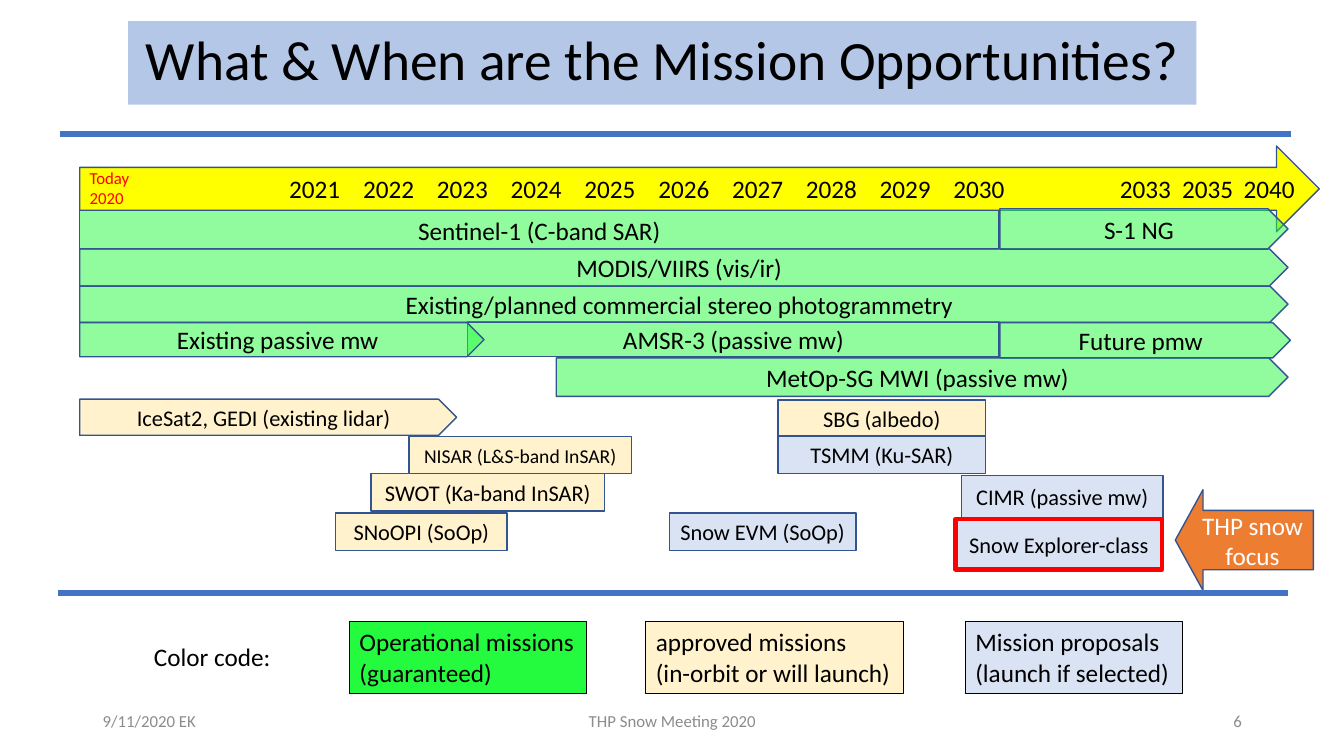
from lxml import etree
from pptx import Presentation
from pptx.dml.color import RGBColor
from pptx.enum.shapes import MSO_CONNECTOR, MSO_SHAPE
from pptx.enum.text import MSO_ANCHOR, PP_ALIGN
from pptx.oxml.ns import qn
from pptx.util import Cm, Pt

RECTANGLE, PENTAGON = MSO_SHAPE.RECTANGLE, MSO_SHAPE.PENTAGON
RIGHT_ARROW, LEFT_ARROW = MSO_SHAPE.RIGHT_ARROW, MSO_SHAPE.LEFT_ARROW
LEFT, CENTER, RIGHT = PP_ALIGN.LEFT, PP_ALIGN.CENTER, PP_ALIGN.RIGHT
TOP, MIDDLE = MSO_ANCHOR.TOP, MSO_ANCHOR.MIDDLE
STRAIGHT = MSO_CONNECTOR.STRAIGHT

FONT = "Calibri"
BLACK, WHITE, RED, GRAY = "000000", "FFFFFF", "FF0000", "8C8C8C"
NAVY, BLUE, TITLE_BLUE = "325491", "4472C4", "B4C7E7"
YELLOW, ORANGE = "FFFF00", "ED7D31"
GREEN, CREAM, PALE_BLUE = "25FB3E", "FFF2CC", "DAE3F3"

# All boxes are left, top, width, height in centimetres.
TITLE = "What & When are the Mission Opportunities?"
TITLE_BOX = (3.23, 0.53, 26.92, 2.11)
TIMELINE_BOX = (2.01, 3.68, 31.24, 2.16)
RULES = [(1.45, 32.46, 14.94), (1.5, 32.54, 3.38)]  # from x, to x, y

OPERATIONAL = [
    ("AMSR-3 (passive mw)", RECTANGLE, (11.79, 8.1, 13.39, 0.89)),
    ("Sentinel-1 (C-band SAR)", RECTANGLE, (2.01, 5.31, 23.16, 0.97)),
    ("MODIS/VIIRS (vis/ir)", PENTAGON, (2.01, 6.27, 30.45, 0.94)),
    ("Existing/planned commercial stereo photogrammetry", PENTAGON,
     (2.01, 7.21, 30.45, 0.91)),
    ("Future pmw", PENTAGON, (25.2, 8.13, 7.32, 0.89)),
    ("MetOp-SG MWI (passive mw)", PENTAGON, (14.02, 9.02, 18.44, 0.97)),
    ("S-1 NG", PENTAGON, (25.2, 5.26, 7.26, 1.02)),
    ("Existing passive mw", PENTAGON, (2.01, 8.13, 10.19, 0.86)),
]
OTHER_MISSIONS = [
    ("SNoOPI (SoOp)", RECTANGLE, CREAM, 16, (8.46, 12.93, 4.32, 0.94)),
    ("NISAR (L&S-band InSAR)", RECTANGLE, CREAM, 14, (10.31, 11, 5.61, 0.94)),
    ("SWOT (Ka-band InSAR)", RECTANGLE, CREAM, 16, (9.35, 11.94, 5.89, 0.94)),
    ("Snow EVM (SoOp)", RECTANGLE, PALE_BLUE, 16, (16.87, 12.93, 4.7, 0.94)),
    ("TSMM (Ku-SAR)", RECTANGLE, PALE_BLUE, 16, (19.61, 10.97, 5.23, 0.97)),
    ("SBG (albedo)", RECTANGLE, CREAM, 16, (19.61, 10.08, 5.23, 0.91)),
    ("CIMR (passive mw)", RECTANGLE, PALE_BLUE, 16, (24.23, 11.99, 5.08, 1.07)),
    ("IceSat2, GEDI (existing lidar)", PENTAGON, CREAM, 16, (2.01, 10.06, 9.5, 0.91)),
]
EXPLORER = ("Snow Explorer-class", (24.08, 13.08, 5.21, 1.27))
FOCUS = ("THP snow focus", (29.62, 12.34, 3.48, 2.54))
FOCUS_ADJUSTMENTS = (0.59, 0.275)

FIRST_YEAR, LAST_YEAR = 2021, 2030
YEAR_START, YEAR_PITCH, YEAR_TOP = 7.04, 1.86, 4.24
LATER_YEARS = [(2033, 27.97), (2035, 29.54), (2040, 31.09)]
YEAR_SIZE = (1.8, 1.02)

LEGEND_TOP, LEGEND_HEIGHT = 15.67, 1.8
LEGEND = [
    ("Operational missions\n(guaranteed)", GREEN, 8.81, 5.97),
    ("approved missions\n(in-orbit or will launch)", CREAM, 16.28, 6.48),
    ("Mission proposals\n(launch if selected)", PALE_BLUE, 24.33, 5.46),
]
LABELS = [
    ("Today\n2020", (2.01, 4.09, 1.52, 1.37), 12, RED),
    ("Color code:", (3.63, 16.03, 3.48, 1.02), 18, BLACK),
]
FOOTERS = [
    ("9/11/2020 EK", LEFT, (2.34, 17.65, 7.62, 1.02)),
    ("THP Snow Meeting 2020", CENTER, (11.23, 17.65, 11.43, 1.02)),
    ("6", RIGHT, (23.93, 17.65, 7.62, 1.02)),
]


def rgb(value):
    return RGBColor.from_string(value)


def lengths(box):
    return [Cm(value) for value in box]


def set_all(target, values):
    for name, value in values.items():
        setattr(target, name, value)


def write(shape, text, size=18, color=BLACK, align=CENTER, anchor=MIDDLE, wrap=True,
          spacing=1.0):
    frame = shape.text_frame
    frame.text = text
    set_all(frame, {"word_wrap": wrap, "vertical_anchor": anchor})
    for paragraph in frame.paragraphs:
        set_all(paragraph, {"alignment": align, "line_spacing": spacing})
        for run in paragraph.runs:
            set_all(run.font, {"name": FONT, "size": Pt(size)})
            run.font.color.rgb = rgb(color)


def fill_with(shape, color, opacity=100):
    shape.fill.solid()
    shape.fill.fore_color.rgb = rgb(color)
    if opacity < 100:
        color_element = shape.fill._xPr.find(".//" + qn("a:srgbClr"))
        etree.SubElement(color_element, qn("a:alpha"), val=str(opacity * 1000))


def add_block(slide, kind, box, fill, line=NAVY, line_width=1, opacity=100):
    shape = slide.shapes.add_shape(kind, *lengths(box))
    shape.shadow.inherit = False
    fill_with(shape, fill, opacity)
    shape.line.color.rgb = rgb(line)
    shape.line.width = Pt(line_width)
    return shape


def add_label(slide, text, box, **text_format):
    write(slide.shapes.add_textbox(*lengths(box)), text, **text_format)


def add_rule(slide, start, end, height):
    rule = slide.shapes.add_connector(STRAIGHT, *lengths((start, height, end, height)))
    rule.line.color.rgb = rgb(BLUE)
    rule.line.width = Pt(4.5)
    etree.SubElement(rule._element.spPr, qn("a:effectLst"))


def add_missions(slide):
    for text, kind, box in OPERATIONAL:
        write(add_block(slide, kind, box, GREEN, opacity=50), text)
    for text, kind, fill, size, box in OTHER_MISSIONS:
        write(add_block(slide, kind, box, fill), text, size)
    text, box = EXPLORER
    write(add_block(slide, RECTANGLE, box, PALE_BLUE, RED, 3), text, 16)
    text, box = FOCUS
    focus = add_block(slide, LEFT_ARROW, box, ORANGE)
    for index, value in enumerate(FOCUS_ADJUSTMENTS):
        focus.adjustments[index] = value
    write(focus, text, color=WHITE)


def add_years(slide):
    years = [(year, YEAR_START + index * YEAR_PITCH)
             for index, year in enumerate(range(FIRST_YEAR, LAST_YEAR + 1))]
    for year, left in years + LATER_YEARS:
        add_label(slide, str(year), (left, YEAR_TOP, *YEAR_SIZE),
                  align=LEFT, anchor=TOP, wrap=False)


def add_legend(slide):
    for text, fill, left, width in LEGEND:
        box = (left, LEGEND_TOP, width, LEGEND_HEIGHT)
        write(add_block(slide, RECTANGLE, box, fill, BLACK, 0.75), text,
              align=LEFT, anchor=TOP, wrap=False)


def main():
    presentation = Presentation()
    set_all(presentation, {"slide_width": Cm(33.87), "slide_height": Cm(19.05)})
    slide = presentation.slides.add_slide(presentation.slide_layouts[5])

    title = slide.shapes.title
    set_all(title, dict(zip(("left", "top", "width", "height"), lengths(TITLE_BOX))))
    fill_with(title, TITLE_BLUE)
    write(title, TITLE, 39.6, spacing=0.9)

    add_block(slide, RIGHT_ARROW, TIMELINE_BOX, YELLOW)
    add_missions(slide)
    add_years(slide)
    add_legend(slide)
    for text, box, size, color in LABELS:
        add_label(slide, text, box, size=size, color=color,
                  align=LEFT, anchor=TOP, wrap=False)
    for rule in RULES:
        add_rule(slide, *rule)
    for text, align, box in FOOTERS:
        add_label(slide, text, box, size=12, color=GRAY, align=align)
    presentation.save("out.pptx")


if __name__ == "__main__":
    main()
